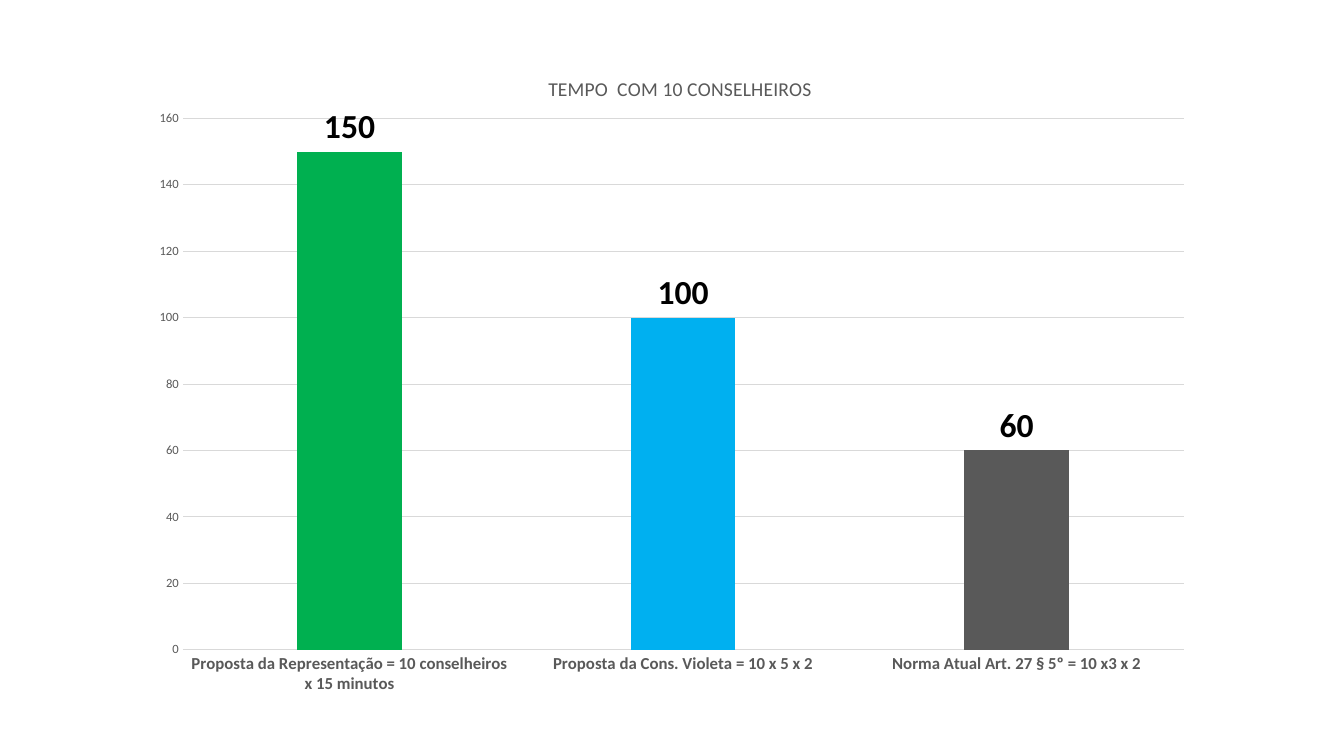
from lxml.etree import SubElement
from pptx import Presentation
from pptx.chart.data import CategoryChartData
from pptx.dml.color import RGBColor
from pptx.enum.chart import XL_CHART_TYPE, XL_LABEL_POSITION, XL_TICK_MARK
from pptx.oxml.ns import qn
from pptx.util import Inches, Pt

TITLE = "TEMPO  COM 10 CONSELHEIROS"
PROPOSALS = [
    ("Proposta da Representação = 10 conselheiros x 15 minutos", 150, "green"),
    ("Proposta da Cons. Violeta = 10 x 5 x 2", 100, "blue"),
    ("Norma Atual Art. 27 § 5º = 10 x3 x 2", 60, "gray"),
]
COLORS = {"green": "00B050", "blue": "00B0F0", "gray": "595959",
          "grid": "D9D9D9", "black": "000000"}
FONTS = {
    "title": {"size": Pt(14), "bold": False, "color": "gray"},
    "categories": {"size": Pt(12), "bold": True, "color": "gray"},
    "values": {"size": Pt(9), "bold": False, "color": "gray"},
    "labels": {"size": Pt(24), "bold": True, "color": "black"},
}
# Shares of the chart's size
TITLE_PLACE = {"x": 0.38, "y": 0.04}
PLOT_PLACE = {"x": 0.04, "y": 0.11, "w": 0.94, "h": 0.8}


def rgb(color):
    return RGBColor.from_string(COLORS[color])


def style_font(font, part):
    font.name = "Calibri"
    for attribute, value in FONTS[part].items():
        if attribute == "color":
            font.color.rgb = rgb(value)
        else:
            setattr(font, attribute, value)


def style_line(line):
    line.color.rgb = rgb("grid")
    line.width = Pt(0.75)


def place(layout, shares, inner=False):
    """Fix a chart part at the given shares of the chart's size."""
    manual = SubElement(layout, qn("c:manualLayout"))
    if inner:
        SubElement(manual, qn("c:layoutTarget")).set("val", "inner")
    for side in ("x", "y"):
        SubElement(manual, qn(f"c:{side}Mode")).set("val", "edge")
    for side, share in shares.items():
        SubElement(manual, qn(f"c:{side}")).set("val", str(share))


def layout_after(element):
    layout = element.makeelement(qn("c:layout"))
    element.addnext(layout)
    return layout


def plot_layout(plot_area):
    layout = plot_area.find(qn("c:layout"))
    if layout is None:
        layout = plot_area.makeelement(qn("c:layout"))
        plot_area.insert(0, layout)
    return layout


def title_layout(title):
    layout = title.find(qn("c:layout"))
    return layout_after(title.find(qn("c:tx"))) if layout is None else layout


def build_chart(slide):
    data = CategoryChartData()
    data.categories = [name for name, _, _ in PROPOSALS]
    data.add_series("Series 1", [minutes for _, minutes, _ in PROPOSALS])
    chart = slide.shapes.add_chart(
        XL_CHART_TYPE.COLUMN_CLUSTERED, Inches(1.39), Inches(0.45),
        Inches(10.56), Inches(6.59), data).chart
    chart.has_legend = False
    chart.font.name = "Calibri"
    chart.font.size = Pt(10)

    heading = chart.chart_title.text_frame
    heading.text = TITLE
    style_font(heading.paragraphs[0].runs[0].font, "title")
    chart.chart_title.include_in_layout = False

    categories, values = chart.category_axis, chart.value_axis
    for axis, part in ((categories, "categories"), (values, "values")):
        axis.major_tick_mark = axis.minor_tick_mark = XL_TICK_MARK.NONE
        style_font(axis.tick_labels.font, part)
    style_line(categories.format.line)
    style_line(values.major_gridlines.format.line)
    values.format.line.fill.background()
    values.minimum_scale, values.maximum_scale, values.major_unit = 0, 160, 20

    plot = chart.plots[0]
    plot.gap_width, plot.overlap, plot.vary_by_categories = 219, -27, False
    plot.has_data_labels = True
    labels = plot.data_labels
    labels.show_value = True
    labels.position = XL_LABEL_POSITION.OUTSIDE_END
    style_font(labels.font, "labels")
    for index, (_, _, color) in enumerate(PROPOSALS):
        fill = plot.series[0].points[index].format.fill
        fill.solid()
        fill.fore_color.rgb = rgb(color)

    chart_xml = chart.element.find(qn("c:chart"))
    place(title_layout(chart_xml.find(qn("c:title"))), TITLE_PLACE)
    place(plot_layout(chart_xml.find(qn("c:plotArea"))), PLOT_PLACE, inner=True)


def main():
    deck = Presentation()
    deck.slide_width, deck.slide_height = Inches(13.33), Inches(7.5)
    build_chart(deck.slides.add_slide(deck.slide_layouts[6]))
    deck.save("out.pptx")


if __name__ == "__main__":
    main()
